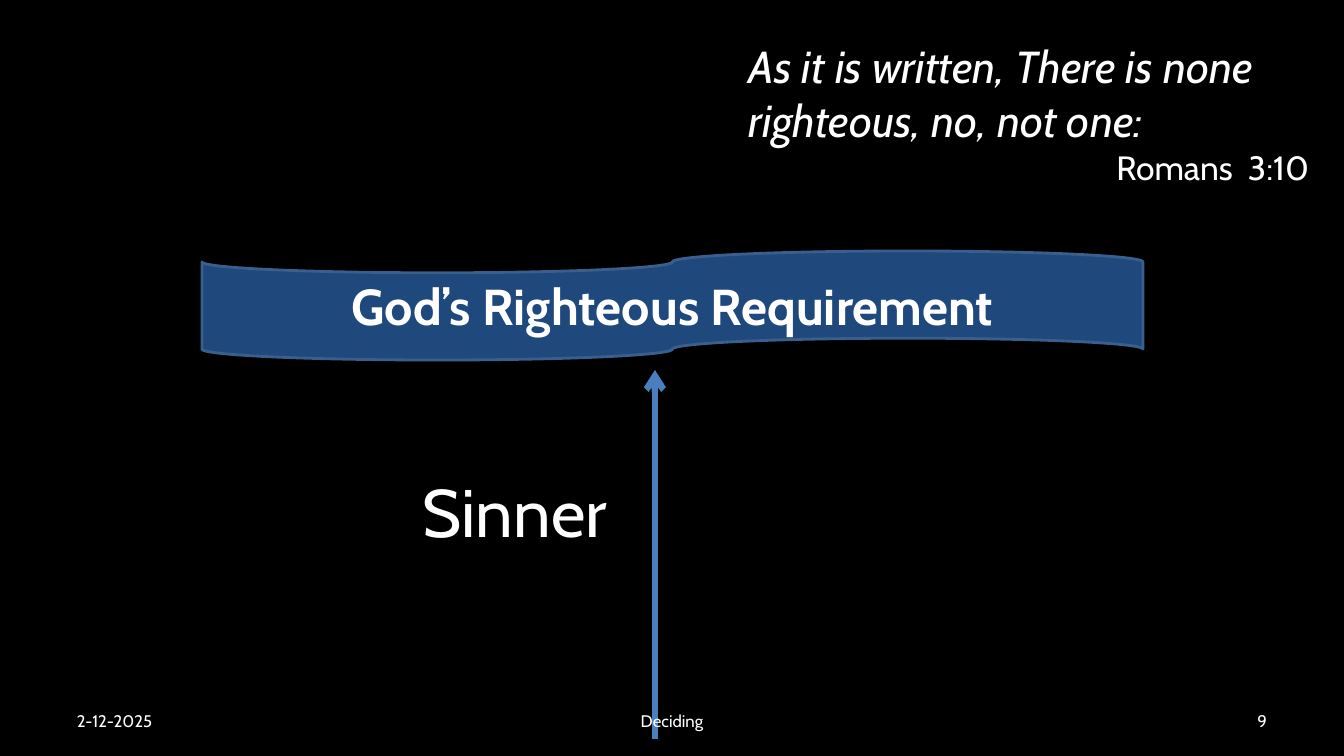
import pptx
import pptx.util
import pptx.dml.color
import pptx.enum.shapes
import pptx.enum.text
import pptx.oxml.ns
from lxml import etree

EMU_PER_PX = 914400 / 100.8
FONT = "Cabin"
COLORS = {
    "background": "000000",
    "text": "FFFFFF",
    "banner": "1F497D",
    "banner_edge": "3A5F8C",
    "arrow": "4B7EBC",
}
ALIGN = pptx.enum.text.PP_ALIGN
ANCHOR = pptx.enum.text.MSO_ANCHOR


def px(length):
    return round(length * EMU_PER_PX)


def color(name):
    return pptx.dml.color.RGBColor.from_string(COLORS[name])


def write(paragraph, text, size, align=ALIGN.LEFT, bold=False, italic=False):
    paragraph.text = text
    paragraph.alignment = align
    for run in paragraph.runs:
        run.font.name = FONT
        run.font.size = pptx.util.Pt(size)
        run.font.bold = bold
        run.font.italic = italic
        run.font.color.rgb = color("text")


def add_text_frame(slide, left, top, width, height, anchor=ANCHOR.TOP, wrap=True):
    box = slide.shapes.add_textbox(px(left), px(top), px(width), px(height))
    frame = box.text_frame
    frame.word_wrap = wrap
    frame.vertical_anchor = anchor
    return frame


def add_banner(slide, text, left, top, width, height):
    banner = slide.shapes.add_shape(
        pptx.enum.shapes.MSO_SHAPE.FLOWCHART_PUNCHED_TAPE,
        px(left), px(top), px(width), px(height))
    banner.shadow.inherit = False
    banner.fill.solid()
    banner.fill.fore_color.rgb = color("banner")
    banner.line.color.rgb = color("banner_edge")
    banner.line.width = pptx.util.Pt(2)
    banner.text_frame.vertical_anchor = ANCHOR.MIDDLE
    write(banner.text_frame.paragraphs[0], text, 36, ALIGN.CENTER, bold=True)


def add_up_arrow(slide, x, bottom, top):
    arrow = slide.shapes.add_connector(
        pptx.enum.shapes.MSO_CONNECTOR.STRAIGHT, px(x), px(bottom), px(x), px(top))
    arrow.line.color.rgb = color("arrow")
    arrow.line.width = pptx.util.Pt(4.5)
    etree.SubElement(arrow.line._get_or_add_ln(), pptx.oxml.ns.qn("a:tailEnd"), type="arrow")
    etree.SubElement(arrow._element.spPr, pptx.oxml.ns.qn("a:effectLst"))


def add_verse(slide, quote, reference, left, top, width, height):
    verse = add_text_frame(slide, left, top, width, height)
    write(verse.paragraphs[0], quote, 32, italic=True)
    write(verse.add_paragraph(), reference, 24, ALIGN.RIGHT)


def add_footer(slide, text, left, width, align):
    footer = add_text_frame(slide, left, 701, width, 40, ANCHOR.MIDDLE)
    write(footer.paragraphs[0], text, 12, align)


def main():
    deck = pptx.Presentation()
    deck.slide_width = px(1344)
    deck.slide_height = px(756)
    slide = deck.slides.add_slide(deck.slide_layouts.get_by_name("Blank"))
    slide.background.fill.solid()
    slide.background.fill.fore_color.rgb = color("background")

    add_banner(slide, "God’s Righteous Requirement", 202, 251, 941, 109)
    sinner = add_text_frame(slide, 413, 465, 210, 92, wrap=False)
    write(sinner.paragraphs[0], "Sinner", 48)
    add_up_arrow(slide, 655, 739, 370)
    add_verse(slide, "As it is written, There is none righteous, no, not one:",
              "Romans  3:10", 739, 34, 580, 201)

    add_footer(slide, "2-12-2025", 67, 314, ALIGN.LEFT)
    add_footer(slide, "9", 963, 314, ALIGN.RIGHT)
    add_footer(slide, "Deciding", 459, 426, ALIGN.CENTER)
    deck.save("out.pptx")


if __name__ == "__main__":
    main()
